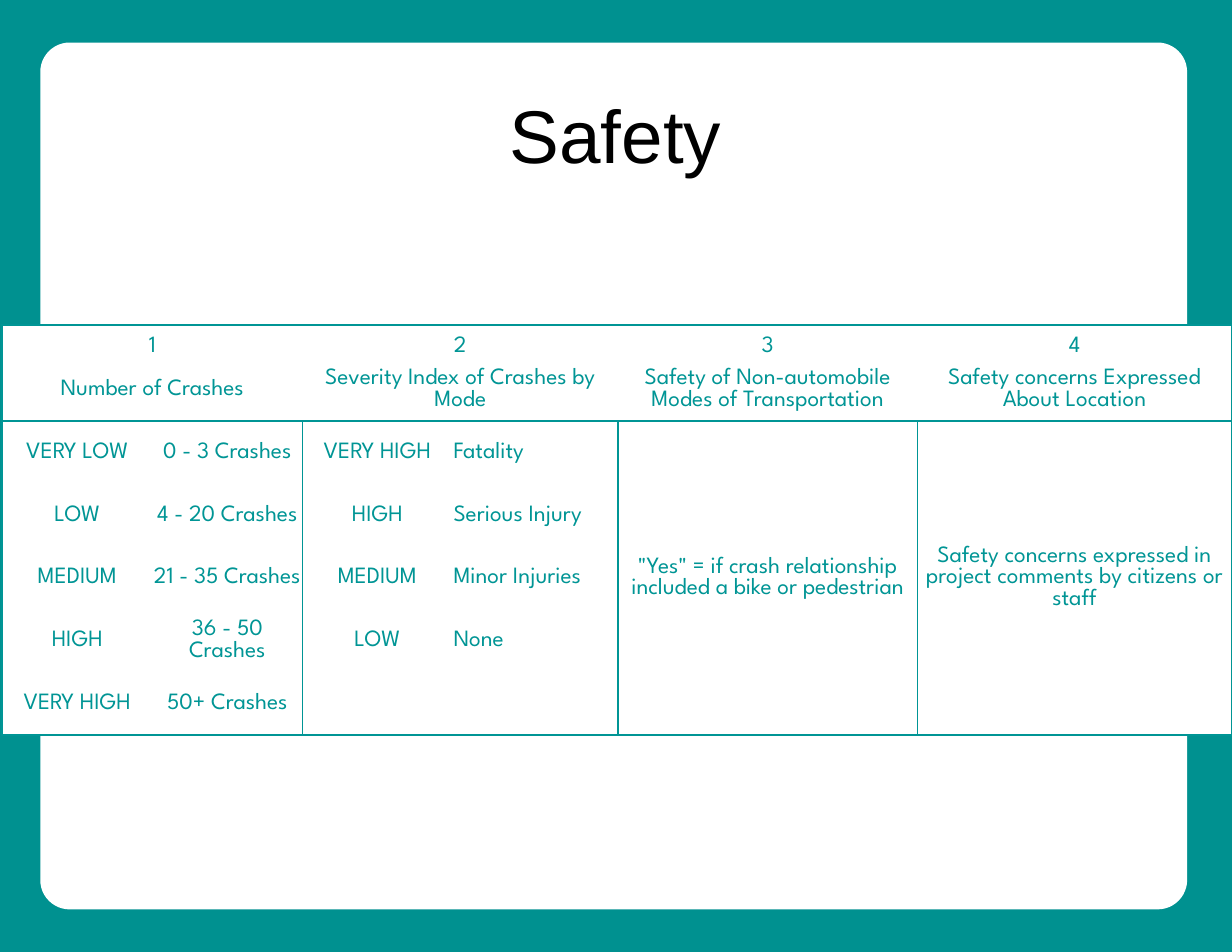
from dataclasses import dataclass

from lxml.etree import SubElement, Element
from pptx import Presentation
from pptx.dml.color import RGBColor
from pptx.enum.shapes import MSO_SHAPE as Shape
from pptx.enum.text import MSO_ANCHOR as Anchor, PP_ALIGN as Align
from pptx.oxml.ns import qn
from pptx.util import Inches, Pt


@dataclass(frozen=True)
class Theme:
    frame: str = "009190"
    accent: str = "009595"
    paper: str = "FFFFFF"
    ink: str = "000000"
    title_font: str = "Arial"
    table_font: str = "League Spartan"
    title_size: int = 48
    table_size: int = 15
    outer_line: float = 1.5
    inner_line: float = 1


THEME = Theme()
WIDTH, HEIGHT = 11, 8.5

COLUMNS = [1.34, 1.34, 1.34, 1.48, 2.67, 2.81]
ROWS = [0.29] + [0.57] + [0.56] * 5
HEADER_ROWS = 2
DIVIDERS = (2, 4, 5)  # column edges ruled below the header
LEFT_COLUMN = 3       # injuries are the only left-aligned text

# Each heading: first column, columns spanned, number, criterion
HEADINGS = [
    (0, 2, "1", "Number of Crashes"),
    (2, 2, "2", "Severity Index of Crashes by Mode"),
    (4, 1, "3", "Safety of Non-automobile Modes of Transportation"),
    (5, 1, "4", "Safety concerns Expressed About Location"),
]
RATINGS = [
    ("VERY LOW", "0 - 3 Crashes", "VERY HIGH", "Fatality"),
    ("LOW", "4 - 20 Crashes", "HIGH", "Serious Injury"),
    ("MEDIUM", "21 - 35 Crashes", "MEDIUM", "Minor Injuries"),
    ("HIGH", "36 - 50 Crashes", "LOW", "None"),
    ("VERY HIGH", "50+ Crashes"),
]
NOTES = {
    4: '"Yes" = if crash relationship included a bike or pedestrian',
    5: "Safety concerns expressed in project comments by citizens or staff",
}


def set_all(target, values):
    for name, value in values.items():
        setattr(target, name, value)


def write(paragraph, text, font, size, color, align):
    paragraph.alignment = align
    run = paragraph.add_run()
    run.text = text
    set_all(run.font, {"name": font, "size": Pt(size)})
    run.font.color.rgb = RGBColor.from_string(color)


def add_panel(slide, kind, box, color):
    shape = slide.shapes.add_shape(kind, *map(Inches, box))
    shape.shadow.inherit = False
    shape.fill.solid()
    shape.fill.fore_color.rgb = RGBColor.from_string(color)
    shape.line.fill.background()
    return shape


def add_title(slide, text, box):
    frame = slide.shapes.add_textbox(*map(Inches, box)).text_frame
    set_all(frame, {"word_wrap": True, "vertical_anchor": Anchor.TOP,
                    "margin_top": Inches(0.12)})
    write(frame.paragraphs[0], text, THEME.title_font, THEME.title_size,
          THEME.ink, Align.CENTER)


def fill_cell(cell, text, row, column):
    anchor = Anchor.BOTTOM if row == 0 else Anchor.MIDDLE
    in_left_column = column == LEFT_COLUMN and row >= HEADER_ROWS
    cell.vertical_anchor = anchor
    write(cell.text_frame.paragraphs[0], text, THEME.table_font,
          THEME.table_size, THEME.accent,
          Align.LEFT if in_left_column else Align.CENTER)


def vertical_line(edge, row):
    if edge in (0, len(COLUMNS)):
        return THEME.outer_line
    return THEME.inner_line if edge in DIVIDERS and row >= HEADER_ROWS else 0


def horizontal_line(edge):
    return THEME.outer_line if edge in (0, HEADER_ROWS, len(ROWS)) else 0


def rule_cell(cell, row, column):
    right = column + (cell.span_width if cell.is_merge_origin else 1)
    bottom = row + (cell.span_height if cell.is_merge_origin else 1)
    widths = {"a:lnL": vertical_line(column, row),
              "a:lnR": vertical_line(right, row),
              "a:lnT": horizontal_line(row),
              "a:lnB": horizontal_line(bottom)}
    properties = cell._tc.get_or_add_tcPr()
    for position, (tag, width) in enumerate(widths.items()):
        line = Element(qn(tag), w=str(Pt(width)))
        if width:
            fill = SubElement(line, qn("a:solidFill"))
            SubElement(fill, qn("a:srgbClr"), val=THEME.accent)
        else:
            SubElement(line, qn("a:noFill"))
        properties.insert(position, line)


def add_criteria_table(slide, left, top):
    table = slide.shapes.add_table(
        len(ROWS), len(COLUMNS), Inches(left), Inches(top),
        Inches(sum(COLUMNS)), Inches(sum(ROWS))).table
    set_all(table, {"first_row": False, "horz_banding": False})
    for column, width in zip(table.columns, COLUMNS):
        column.width = Inches(width)
    for row, height in zip(table.rows, ROWS):
        row.height = Inches(height)

    # Headings
    for column, span, *lines in HEADINGS:
        for row, text in enumerate(lines):
            if span > 1:
                table.cell(row, column).merge(table.cell(row, column + span - 1))
            fill_cell(table.cell(row, column), text, row, column)

    # Rating scales
    for row, texts in enumerate(RATINGS, HEADER_ROWS):
        for column, text in enumerate(texts):
            fill_cell(table.cell(row, column), text, row, column)

    # Full-height notes
    for column, text in NOTES.items():
        cell = table.cell(HEADER_ROWS, column)
        cell.merge(table.cell(len(ROWS) - 1, column))
        fill_cell(cell, text, HEADER_ROWS, column)

    # Fills, margins and rules
    margin = Inches(0.01)
    for row in range(len(ROWS)):
        for column in range(len(COLUMNS)):
            cell = table.cell(row, column)
            set_all(cell, {"margin_left": margin, "margin_right": margin,
                           "margin_top": margin, "margin_bottom": 0})
            cell.fill.solid()
            cell.fill.fore_color.rgb = RGBColor.from_string(THEME.paper)
            rule_cell(cell, row, column)


def main():
    presentation = Presentation()
    set_all(presentation, {"slide_width": Inches(WIDTH),
                           "slide_height": Inches(HEIGHT)})
    slide = presentation.slides.add_slide(presentation.slide_layouts[6])

    # Coloured frame around a rounded page
    add_panel(slide, Shape.RECTANGLE, (0, 0, WIDTH, HEIGHT), THEME.frame)
    page = add_panel(slide, Shape.ROUNDED_RECTANGLE,
                     (0.36, 0.38, 10.24, 7.74), THEME.paper)
    page.adjustments[0] = 0.034

    add_title(slide, "Safety", (0.82, 0.67, 9.35, 1.42))
    add_criteria_table(slide, 0.02, 2.9)
    presentation.save("out.pptx")


if __name__ == "__main__":
    main()
